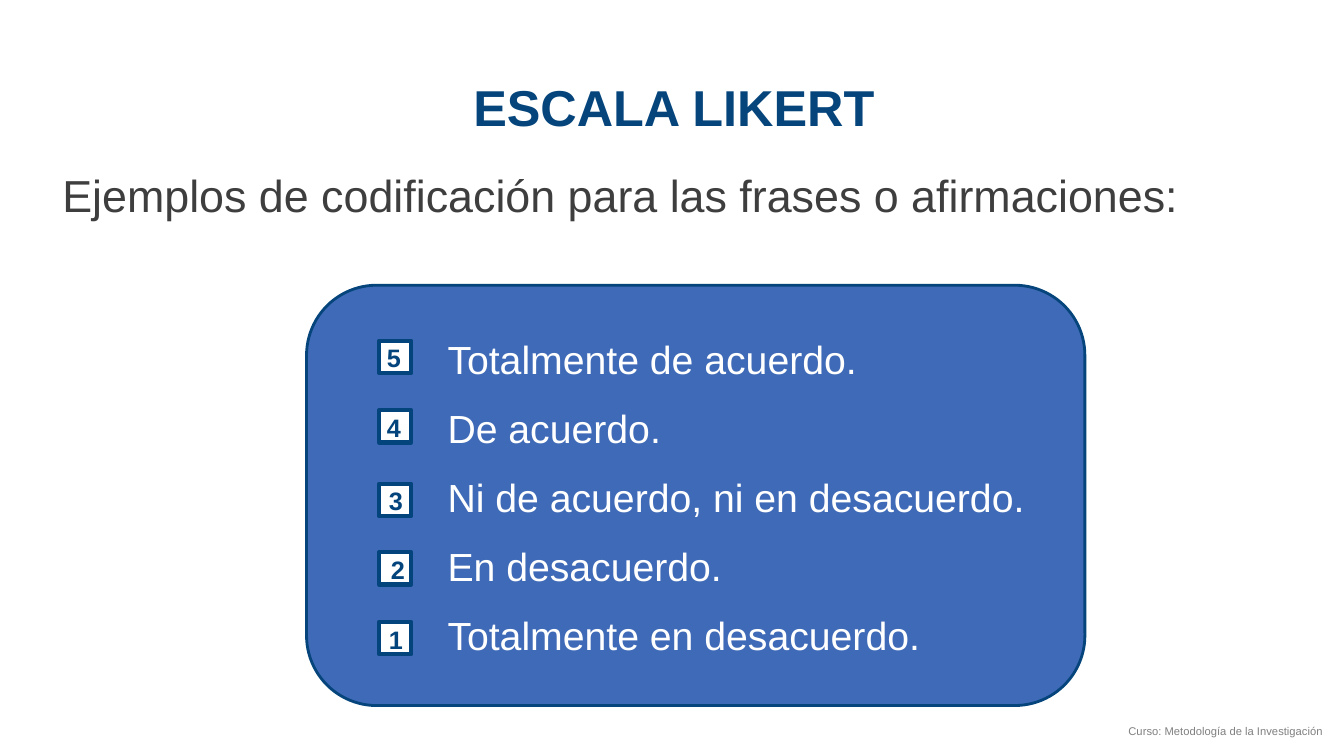
"""Build the Likert scale coding slide."""
from dataclasses import dataclass

from pptx import Presentation
from pptx.dml import color
from pptx.enum import shapes, text
from pptx.slide import Slide
from pptx.util import Inches, Pt

NAVY = "05457C"
BADGE_NAVY = "04447C"
WHITE = "FFFFFF"
BADGE_SIZE = 0.32


@dataclass(frozen=True)
class Box:
    left: float
    top: float
    width: float
    height: float


@dataclass(frozen=True)
class Style:
    size: float
    color: str
    bold: bool = False
    align: text.PP_ALIGN = text.PP_ALIGN.LEFT
    anchor: text.MSO_ANCHOR = text.MSO_ANCHOR.TOP
    gap: float = 0
    wrap: bool = True


@dataclass(frozen=True)
class Answer:
    code: str
    label: str
    badge_top: float
    code_left: float


ANSWERS = [
    Answer("5", "Totalmente de acuerdo.", 3.38, 3.74),
    Answer("4", "De acuerdo.", 4.07, 3.74),
    Answer("3", "Ni de acuerdo, ni en desacuerdo.", 4.8, 3.76),
    Answer("2", "En desacuerdo.", 5.48, 3.78),
    Answer("1", "Totalmente en desacuerdo.", 6.17, 3.76),
]

LABEL_STYLE = Style(28, WHITE, gap=15.6)
CODE_STYLE = Style(18, BADGE_NAVY, bold=True, wrap=False)
SUBTITLE_STYLE = Style(32, "3E3E3E", align=text.PP_ALIGN.JUSTIFY,
                       anchor=text.MSO_ANCHOR.MIDDLE)
TITLE_STYLE = Style(36, NAVY, bold=True, align=text.PP_ALIGN.CENTER,
                    anchor=text.MSO_ANCHOR.MIDDLE)
FOOTER_STYLE = Style(8, "808080", align=text.PP_ALIGN.RIGHT)


def rgb(value: str) -> color.RGBColor:
    return color.RGBColor.from_string(value)


def add_panel(slide: Slide, kind: shapes.MSO_SHAPE, box: Box,
              fill: str, line: str, line_width: float) -> None:
    shape = slide.shapes.add_shape(
        kind, Inches(box.left), Inches(box.top), Inches(box.width), Inches(box.height))
    shape.shadow.inherit = False
    shape.fill.solid()
    shape.fill.fore_color.rgb = rgb(fill)
    shape.line.color.rgb = rgb(line)
    shape.line.width = Pt(line_width)


def add_text(slide: Slide, box: Box, lines: list[str], style: Style) -> None:
    shape = slide.shapes.add_textbox(
        Inches(box.left), Inches(box.top), Inches(box.width), Inches(box.height))
    frame = shape.text_frame
    frame.word_wrap = style.wrap
    frame.vertical_anchor = style.anchor
    for index, line in enumerate(lines):
        paragraph = frame.add_paragraph() if index else frame.paragraphs[0]
        paragraph.alignment = style.align
        if index:
            paragraph.space_before = Pt(style.gap)
        run = paragraph.add_run()
        run.text = line
        run.font.name = "Arial"
        run.font.size = Pt(style.size)
        run.font.bold = style.bold
        run.font.color.rgb = rgb(style.color)


def main() -> None:
    presentation = Presentation()
    presentation.slide_width = Inches(13.33)
    presentation.slide_height = Inches(7.5)
    slide = presentation.slides.add_slide(presentation.slide_layouts[6])

    add_panel(slide, shapes.MSO_SHAPE.ROUNDED_RECTANGLE,
              Box(3.04, 2.83, 7.72, 4.17), "3F6AB7", NAVY, 2)
    add_text(slide, Box(4.34, 3.28, 6.18, 4.07),
             [answer.label for answer in ANSWERS], LABEL_STYLE)
    add_text(slide, Box(0.52, 1.35, 11.97, 1.16),
             ["Ejemplos de codificación para las frases o afirmaciones:"], SUBTITLE_STYLE)
    add_text(slide, Box(0.02, 0.66, 13.33, 0.79), ["ESCALA LIKERT"], TITLE_STYLE)
    for answer in ANSWERS:
        add_panel(slide, shapes.MSO_SHAPE.RECTANGLE,
                  Box(3.76, answer.badge_top, BADGE_SIZE, BADGE_SIZE), WHITE, BADGE_NAVY, 3)
        add_text(slide, Box(answer.code_left, answer.badge_top - 0.03, 0.34, 0.4),
                 [answer.code], CODE_STYLE)
    add_text(slide, Box(9.74, 7.14, 3.48, 0.24),
             ["Curso: Metodología de la Investigación"], FOOTER_STYLE)

    presentation.save("out.pptx")


if __name__ == "__main__":
    main()
